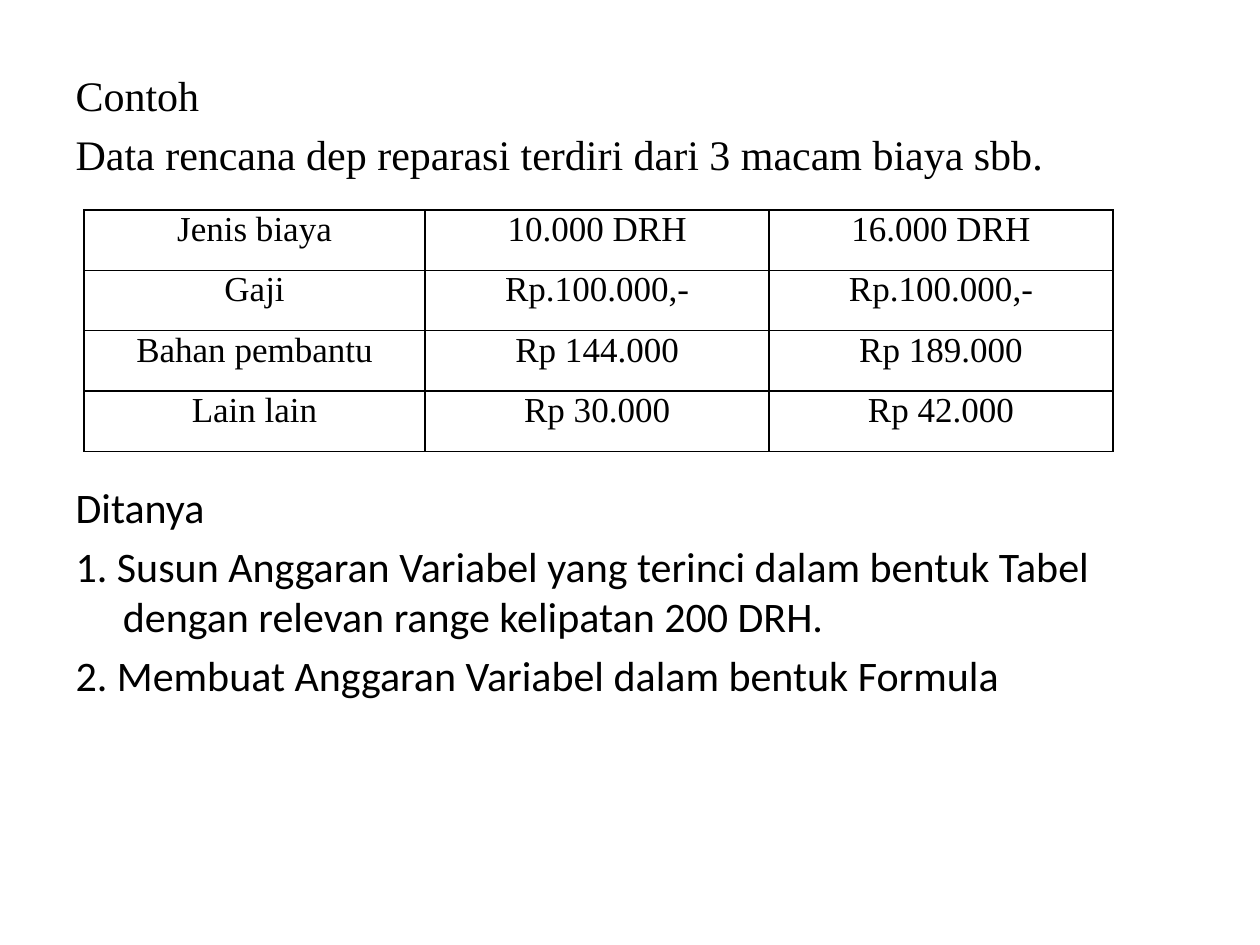
"""Build the slide with the repair cost table and its questions."""
import pptx
import pptx.dml.color
import pptx.enum.text
import pptx.oxml
import pptx.oxml.ns
import pptx.util

Pt = pptx.util.Pt
SERIF = "Times New Roman"
SANS = "Calibri"


def paint(code):
    return pptx.dml.color.RGBColor.from_string(code)


class Deck:
    ink = "000000"

    def __init__(self, wide, high):
        self.file = pptx.Presentation()
        self.file.slide_width = Pt(wide)
        self.file.slide_height = Pt(high)
        self.slide = self.file.slides.add_slide(self.file.slide_layouts[1])
        title = self.slide.shapes.title.element
        title.getparent().remove(title)

    def style(self, para, face, size):
        for run in para.runs:
            run.font.name = face
            run.font.size = Pt(size)
            run.font.color.rgb = paint(self.ink)

    def body(self, box, lines, gaps):
        shape = self.slide.placeholders[1]
        shape.left, shape.top, shape.width, shape.height = map(Pt, box)
        frame = shape.text_frame
        frame.text = "\n".join(text for text, face in lines)
        for row, (para, (text, face)) in enumerate(zip(frame.paragraphs, lines)):
            props = para._p.get_or_add_pPr()
            props.set("marL", str(Pt(27)))
            props.set("indent", str(-Pt(27)))
            if row in gaps:
                para.space_before = Pt(gaps[row])
            props.append(pptx.oxml.parse_xml(
                f"<a:buNone {pptx.oxml.ns.nsdecls('a')}/>"))
            self.style(para, face, 24)

    def edge(self, cell):
        props = cell._tc.get_or_add_tcPr()
        for spot, side in enumerate("LRTB"):
            props.insert(spot, pptx.oxml.parse_xml(
                f"<a:ln{side} {pptx.oxml.ns.nsdecls('a')} w='{Pt(1)}'><a:solidFill>"
                f"<a:srgbClr val='{self.ink}'/></a:solidFill></a:ln{side}>"))

    def table(self, left, top, cols, high, data):
        grid = self.slide.shapes.add_table(
            len(data), len(cols), Pt(left), Pt(top),
            Pt(sum(cols)), Pt(high * len(data))).table
        grid.first_row = grid.horz_banding = False
        for col, wide in zip(grid.columns, cols):
            col.width = Pt(wide)
        for row, texts in zip(grid.rows, data):
            row.height = Pt(high)
            for cell, text in zip(row.cells, texts):
                self.cell(cell, text)

    def cell(self, cell, text):
        cell.margin_left = cell.margin_right = Pt(5)
        cell.margin_top = cell.margin_bottom = 0
        cell.fill.background()
        self.edge(cell)
        cell.text = text
        para = cell.text_frame.paragraphs[0]
        para.alignment = pptx.enum.text.PP_ALIGN.CENTER
        para.space_after = Pt(10)
        self.style(para, SERIF, 20)


def main():
    deck = Deck(720, 540)
    deck.body((36, 36, 648, 446.4), [
        ("Contoh", SERIF),
        ("Data rencana dep reparasi terdiri dari 3 macam biaya sbb.", SERIF),
        ("Ditanya", SANS),
        ("1. Susun Anggaran Variabel yang terinci dalam bentuk Tabel "
         "dengan relevan range kelipatan 200 DRH.", SANS),
        ("2. Membuat Anggaran Variabel dalam bentuk Formula", SANS),
    ], {2: 173})
    deck.table(48, 120, (195, 196.5, 196.5), 34.5, [
        ("Jenis biaya", "10.000 DRH", "16.000 DRH"),
        ("Gaji", "Rp.100.000,-", "Rp.100.000,-"),
        ("Bahan pembantu", "Rp 144.000", "Rp 189.000"),
        ("Lain lain", "Rp 30.000", "Rp 42.000"),
    ])
    deck.file.save("out.pptx")


if __name__ == "__main__":
    main()
